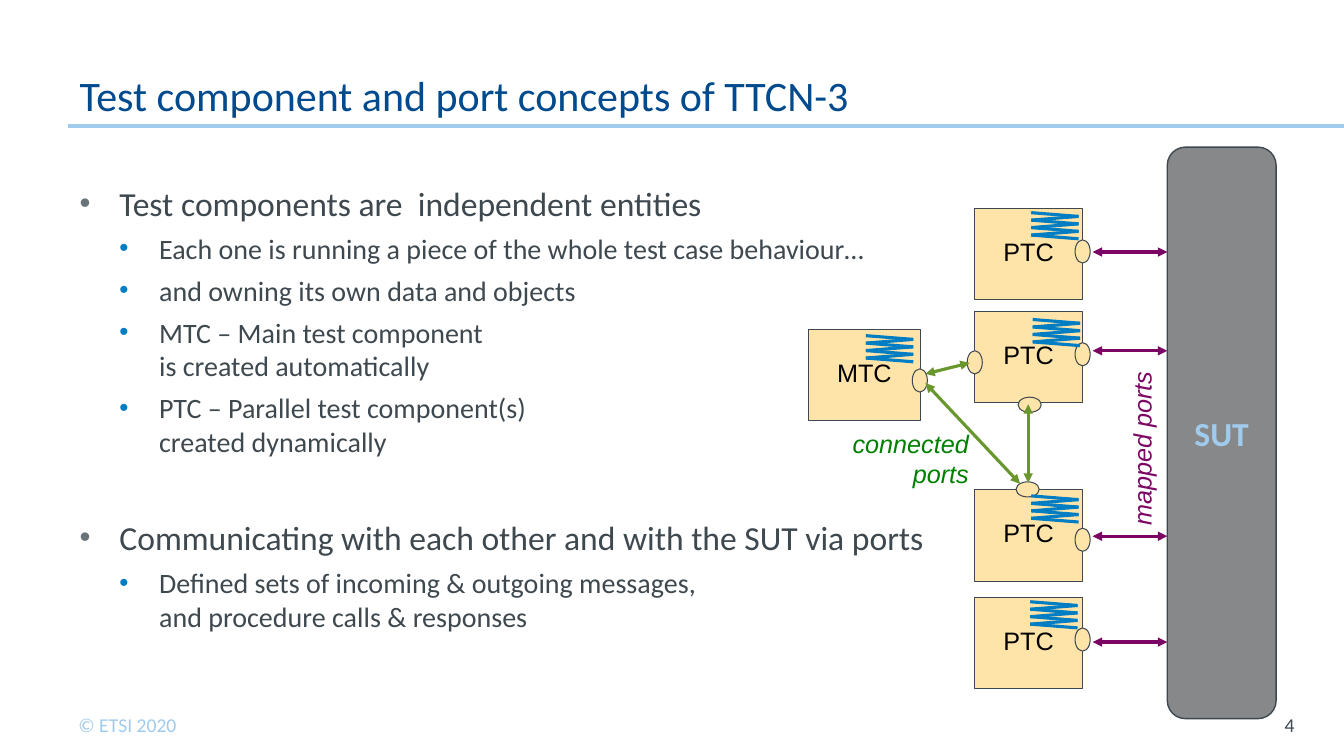
import dataclasses

import pptx
import pptx.dml.color
import pptx.enum.shapes
import pptx.enum.text
import pptx.oxml.ns
import pptx.util
from lxml import etree

RGB = pptx.dml.color.RGBColor
SHAPE = pptx.enum.shapes.MSO_SHAPE
ALIGN = pptx.enum.text.PP_ALIGN
ANCHOR = pptx.enum.text.MSO_ANCHOR
qn = pptx.oxml.ns.qn

# Colours
NAVY = RGB(0x00, 0x4A, 0x8D)
SKY = RGB(0xA0, 0xCB, 0xED)
BLUE = RGB(0x00, 0x7D, 0xC3)
SLATE = RGB(0x3E, 0x48, 0x4F)
BULLET_GREY = RGB(0x69, 0x74, 0x7A)
SUT_GREY = RGB(0x87, 0x88, 0x8A)
SAND = RGB(0xFF, 0xE4, 0xAA)
PURPLE = RGB(0x7B, 0x06, 0x63)
LEAF = RGB(0x6A, 0x97, 0x2D)
GREEN = RGB(0x00, 0x80, 0x00)
BLACK = RGB(0x00, 0x00, 0x00)

# Grid of tenth-inch cells: 133.33 columns by 75 rows
CELL = 0.1
COLUMNS, ROWS = 133.33, 75
PORT_W, PORT_H = 1.5, 2.3
BOX_H = 9.05
COIL_W, COIL_STEP, COIL_STROKES = 4.7, 0.37, 7
MAPPED_FROM, SUT_LEFT = 108.4, 115.8


@dataclasses.dataclass
class Style:
    size: float
    color: RGB
    font: str = "Calibri"
    bold: bool = False
    italic: bool = False


@dataclasses.dataclass
class Port:
    col: float  # centre
    row: float
    turn: int = 0


@dataclasses.dataclass
class Component:
    name: str
    left: float
    top: float
    width: float
    coil: tuple[float, float]
    ports: list[Port]


@dataclasses.dataclass
class Point:
    text: str
    level: int
    before: float


COMPONENTS = [
    Component("PTC", 96.7, 20.7, 10.7, (102.3, 21.1), [Port(107.4, 24.95)]),
    Component("PTC", 96.7, 30.9, 10.7, (102.45, 31.7),
              [Port(107.4, 35.15), Port(96.7, 35.95), Port(102.15, 40.15, 270)]),
    Component("PTC", 96.7, 48.6, 10.7, (102.3, 49.2),
              [Port(107.4, 53.55), Port(101.95, 48.55, 270)]),
    Component("PTC", 96.7, 59.3, 10.7, (102.2, 59.7), [Port(107.4, 63.45)]),
    Component("MTC", 80.2, 32.7, 11.1, (85.9, 33.3), [Port(91.25, 37.75)]),
]
MAPPED_ROWS = [25, 34.8, 53.2, 63.7]
CONNECTIONS = [(91.8, 37.1, 96.2, 36), (91.8, 38, 101.2, 48), (102, 40.1, 102, 47.9)]

POINTS = [
    Point("Test components are  independent entities", 0, 0),
    Point("Each one is running a piece of the whole test case behaviour…", 1, 6),
    Point("and owning its own data and objects", 1, 6),
    Point("MTC – Main test component\nis created automatically", 1, 6),
    Point("PTC – Parallel test component(s)\ncreated dynamically", 1, 6),
    Point("Communicating with each other and with the SUT via ports", 0, 42),
    Point("Defined sets of incoming & outgoing messages,\nand procedure calls & responses", 1, 6),
]
LEVELS = [(Style(24, SLATE), BULLET_GREY), (Style(20, SLATE), BLUE)]
LABEL = Style(18, BLACK, "Arial")


def cells(n: float) -> pptx.util.Emu:
    return pptx.util.Inches(n * CELL)


def write(p, text: str, style: Style, align=ALIGN.LEFT) -> None:
    p.text = text
    p.alignment = align
    for r in p.runs:
        r.font.name, r.font.size = style.font, pptx.util.Pt(style.size)
        r.font.bold, r.font.italic = style.bold, style.italic
        r.font.color.rgb = style.color


def add_text(s, at: tuple, anchor=ANCHOR.TOP, wrap: bool = True, inset: tuple = (1, 0.5)):
    """Add a text box and return its frame; inset is (side, top and bottom)."""
    tf = s.shapes.add_textbox(*map(cells, at)).text_frame
    tf.word_wrap, tf.vertical_anchor = wrap, anchor
    tf.margin_left = tf.margin_right = cells(inset[0])
    tf.margin_top = tf.margin_bottom = cells(inset[1])
    return tf


def add_block(s, kind, at: tuple, fill: RGB, weight: float = 0.75):
    sp = s.shapes.add_shape(kind, *map(cells, at))
    sp.shadow.inherit = False
    sp.fill.solid()
    sp.fill.fore_color.rgb = fill
    sp.line.color.rgb, sp.line.width = SLATE, pptx.util.Pt(weight)
    tf = sp.text_frame
    tf.word_wrap, tf.vertical_anchor = False, ANCHOR.MIDDLE
    return sp


def add_line(s, ends: tuple, color: RGB, arrows: bool = False) -> None:
    line = s.shapes.add_connector(pptx.enum.shapes.MSO_CONNECTOR.STRAIGHT, *map(cells, ends))
    line.line.color.rgb, line.line.width = color, pptx.util.Pt(2.25)
    if arrows:
        ln = line.line._get_or_add_ln()
        for end in ("a:headEnd", "a:tailEnd"):
            etree.SubElement(ln, qn(end), type="triangle")
    etree.SubElement(line._element.spPr, qn("a:effectLst"))


def add_bullet(p, level: int, color: RGB) -> None:
    pPr = p._p.get_or_add_pPr()
    pPr.set("marL", str(cells(3.94 * (level + 1))))
    pPr.set("indent", str(-cells(3.94)))
    clr = etree.SubElement(pPr, qn("a:buClr"))
    etree.SubElement(clr, qn("a:srgbClr"), val=str(color))
    etree.SubElement(pPr, qn("a:buSzPct"), val="93000")
    etree.SubElement(pPr, qn("a:buFont"), typeface="Arial")
    etree.SubElement(pPr, qn("a:buChar"), char="•")


def add_component(s, c: Component) -> None:
    box = add_block(s, SHAPE.RECTANGLE, (c.left, c.top, c.width, BOX_H), SAND)
    p = box.text_frame.paragraphs[0]
    write(p, c.name, LABEL, ALIGN.CENTER)
    p.line_spacing = 0.8
    for port in c.ports:
        at = (port.col - PORT_W / 2, port.row - PORT_H / 2, PORT_W, PORT_H)
        add_block(s, SHAPE.OVAL, at, SAND).rotation = port.turn
    # Coil: strokes run alternately right and left
    col, row = c.coil
    for i in range(COIL_STROKES):
        sides = (col, col + COIL_W) if i % 2 == 0 else (col + COIL_W, col)
        y = row + i * COIL_STEP
        add_line(s, (sides[0], y, sides[1], y + COIL_STEP), BLUE)


def add_frame(s) -> None:
    add_line(s, (6.7, 12.5, COLUMNS, 12.5), SKY)
    tf = add_text(s, (6.8, 70.2, 13.4, 3.4))
    write(tf.paragraphs[0], "© ETSI 2020", Style(14, SKY))
    tf = add_text(s, (122.5, 69.9, 6.9, 4), ANCHOR.MIDDLE)
    write(tf.paragraphs[0], "4", Style(14, SLATE), ALIGN.RIGHT)
    tf = add_text(s, (6.7, 3, 104.2, 9.5), ANCHOR.BOTTOM, inset=(1.2, 0.6))
    p = tf.paragraphs[0]
    write(p, "Test component and port concepts of TTCN-3", Style(30, NAVY))
    p.line_spacing = pptx.util.Pt(30)


def add_points(s) -> None:
    tf = add_text(s, (6.7, 17.5, 122.8, 51.2), inset=(1.2, 0.6))
    for i, point in enumerate(POINTS):
        p = tf.add_paragraph() if i else tf.paragraphs[0]
        style, bullet = LEVELS[point.level]
        p.level = point.level
        add_bullet(p, point.level, bullet)
        write(p, point.text, style)
        p.space_before = pptx.util.Pt(point.before)


def add_diagram(s) -> None:
    for c in COMPONENTS:
        add_component(s, c)
    for row in MAPPED_ROWS:
        add_line(s, (MAPPED_FROM, row, SUT_LEFT, row), PURPLE, arrows=True)
    for ends in CONNECTIONS:
        add_line(s, ends, LEAF, arrows=True)
    # Port captions
    tf = add_text(s, (103.9, 41.5, 19, 4.3), wrap=False)
    tf._parent.rotation = 270
    write(tf.paragraphs[0], "mapped ports", Style(18, PURPLE, "Arial", italic=True))
    tf = add_text(s, (83.6, 42, 14.4, 7.1), wrap=False)
    caption = Style(18, GREEN, "Arial", italic=True)
    write(tf.paragraphs[0], "connected", caption)
    write(tf.add_paragraph(), "ports", caption, ALIGN.RIGHT)
    # System under test
    sut = add_block(s, SHAPE.ROUNDED_RECTANGLE, (SUT_LEFT, 14.6, 10.8, 56.7), SUT_GREY, 1)
    write(sut.text_frame.paragraphs[0], "SUT", Style(24, SKY, bold=True), ALIGN.CENTER)


def main() -> None:
    prs = pptx.Presentation()
    prs.slide_width, prs.slide_height = cells(COLUMNS), cells(ROWS)
    s = prs.slides.add_slide(prs.slide_layouts[6])
    add_frame(s)
    add_points(s)
    add_diagram(s)
    prs.save("out.pptx")


if __name__ == "__main__":
    main()
